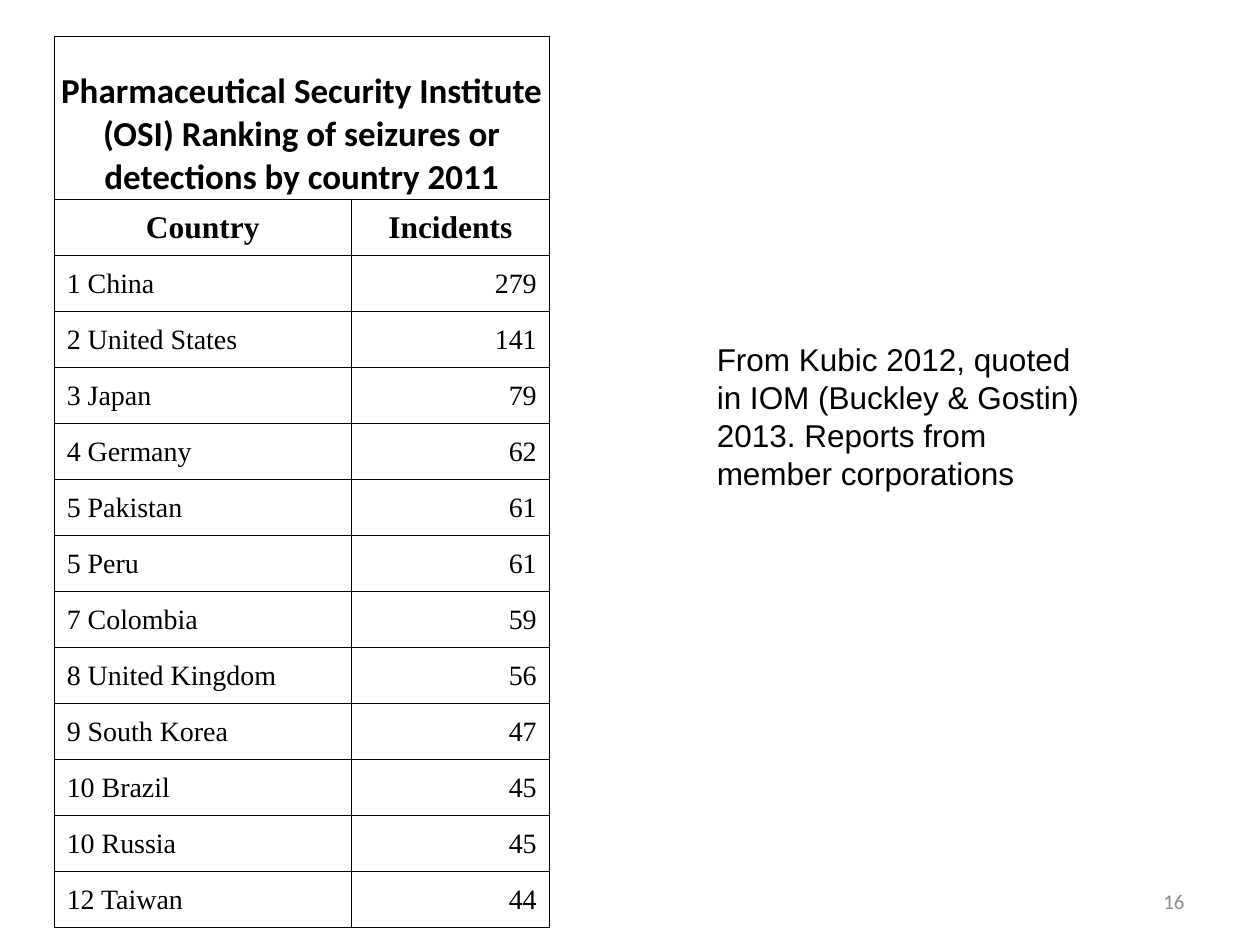
from lxml import etree
from pptx import Presentation
from pptx import util as u
from pptx.dml.color import RGBColor
from pptx.enum import text
from pptx.oxml import ns

BLACK = RGBColor(0x00, 0x00, 0x00)
GRAY = RGBColor(0x8C, 0x8C, 0x8C)
ALIGN = text.PP_ALIGN
ANCHOR = text.MSO_ANCHOR

TITLE = ("Pharmaceutical Security Institute (OSI) Ranking of seizures or "
         "detections by country 2011")
SOURCE = ("From Kubic 2012, quoted in IOM (Buckley & Gostin) 2013. "
          "Reports from member corporations")
INCIDENTS = [
    ("1 China", 279), ("2 United States", 141), ("3 Japan", 79),
    ("4 Germany", 62), ("5 Pakistan", 61), ("5 Peru", 61),
    ("7 Colombia", 59), ("8 United Kingdom", 56), ("9 South Korea", 47),
    ("10 Brazil", 45), ("10 Russia", 45), ("12 Taiwan", 44),
]


class SlideBuilder:
    """Holds the text styles and the slide being filled."""

    styles = {
        "title": dict(name="Calibri", size=u.Pt(20), bold=True),
        "header": dict(name="Times New Roman", size=u.Pt(18), bold=True),
        "body": dict(name="Times New Roman", size=u.Pt(16), bold=False),
        "note": dict(name="Arial", size=u.Pt(18), bold=False),
        "number": dict(name="Calibri", size=u.Pt(12), bold=False),
    }
    cell_margins = dict(margin_left=u.Inches(0.01), margin_right=u.Inches(0.01),
                        margin_top=u.Inches(0.01), margin_bottom=0)

    def __init__(self, slide):
        self.slide = slide

    def add_text(self, frame, content, style, align, color=BLACK):
        paragraph = frame.paragraphs[0]
        paragraph.alignment = align
        run = paragraph.add_run()
        run.text = content
        for name, value in self.styles[style].items():
            setattr(run.font, name, value)
        run.font.color.rgb = color

    def text_box(self, box, content, style, align=ALIGN.LEFT, color=BLACK,
                 anchor=ANCHOR.TOP):
        shape = self.slide.shapes.add_textbox(*map(u.Inches, box))
        frame = shape.text_frame
        frame.word_wrap = True
        frame.vertical_anchor = anchor
        self.add_text(frame, content, style, align, color)

    def table(self, box, column_widths, title_height, row_count):
        """Add an unfilled, ruled table whose first row is one merged title cell."""
        height = box[3]
        table = self.slide.shapes.add_table(
            row_count, len(column_widths), *map(u.Inches, box)).table
        table.first_row = table.horz_banding = False
        for column, column_width in zip(table.columns, column_widths):
            column.width = u.Inches(column_width)
        row_height = (height - title_height) / (row_count - 1)
        for index, row in enumerate(table.rows):
            row.height = u.Inches(row_height if index else title_height)
        for cell in table.iter_cells():
            self.rule(cell)
            cell.fill.background()
        table.cell(0, 0).merge(table.cell(0, len(column_widths) - 1))
        return table

    def rule(self, cell):
        """Draw a thin line on each side of the cell."""
        properties = cell._tc.get_or_add_tcPr()
        for side in ("lnL", "lnR", "lnT", "lnB"):
            line = etree.SubElement(properties, ns.qn(f"a:{side}"), w=str(u.Pt(0.5)))
            fill = etree.SubElement(line, ns.qn("a:solidFill"))
            etree.SubElement(fill, ns.qn("a:srgbClr"), val=str(BLACK))

    def cell(self, cell, content, style, align=ALIGN.CENTER,
             anchor=ANCHOR.MIDDLE, **margins):
        for name, value in {**self.cell_margins, **margins}.items():
            setattr(cell, name, value)
        cell.vertical_anchor = anchor
        self.add_text(cell.text_frame, content, style, align)


def main():
    presentation = Presentation()
    presentation.slide_width = u.Inches(10)
    presentation.slide_height = u.Inches(7.5)
    builder = SlideBuilder(presentation.slides.add_slide(presentation.slide_layouts[6]))

    builder.text_box((7.17, 6.95, 2.33, 0.4), "16", "number", ALIGN.RIGHT, GRAY,
                     ANCHOR.MIDDLE)

    table = builder.table((0.43, 0.29, 3.94, 7.07), (2.36, 1.57), 1.29,
                          len(INCIDENTS) + 2)
    builder.cell(table.cell(0, 0), TITLE, "title", anchor=ANCHOR.BOTTOM)
    for column, heading in enumerate(("Country", "Incidents")):
        builder.cell(table.cell(1, column), heading, "header")
    for row, (country, count) in enumerate(INCIDENTS, start=2):
        builder.cell(table.cell(row, 0), country, "body", ALIGN.LEFT,
                     margin_left=u.Inches(0.1))
        builder.cell(table.cell(row, 1), str(count), "body", ALIGN.RIGHT,
                     margin_right=u.Inches(0.1))

    builder.text_box((5.59, 2.65, 3.15, 1.31), SOURCE, "note")
    presentation.save("out.pptx")


if __name__ == "__main__":
    main()
